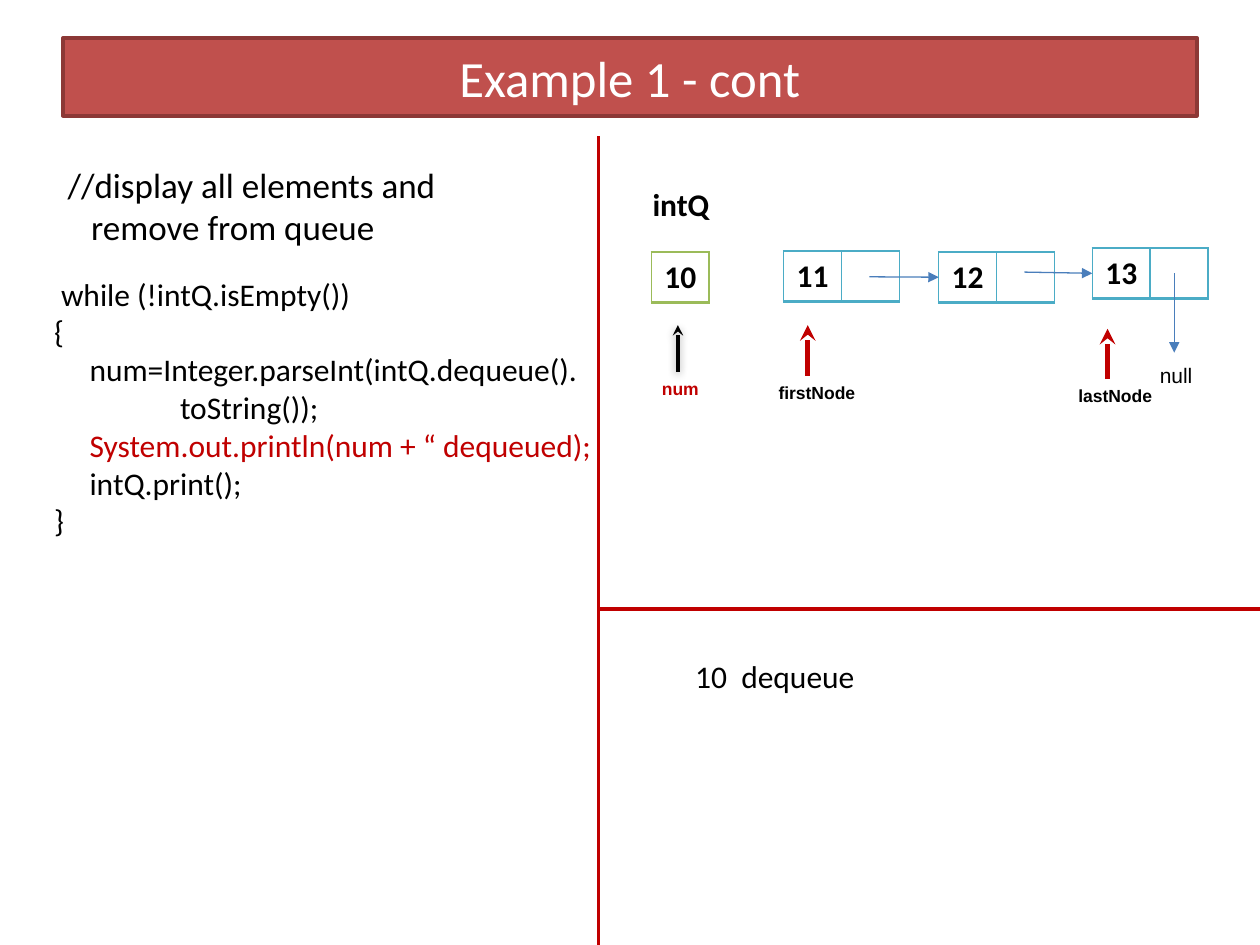
from lxml.etree import SubElement
from pptx import Presentation
from pptx.dml.color import RGBColor
from pptx.enum.shapes import MSO_CONNECTOR
from pptx.enum.text import MSO_ANCHOR, MSO_AUTO_SIZE, PP_ALIGN
from pptx.oxml import parse_xml
from pptx.oxml.ns import nsdecls, qn
from pptx.util import Pt

RED, BLACK, BLUE = "C00000", "000000", "4A7EBB"
TEAL, GREEN = "4BACC6", "9BBB59"


def tint(code):
    """Turn a hex string into a colour."""
    return RGBColor.from_string(code)


def style(para, size, color=BLACK, font="Calibri", bold=False):
    """Format every run of a paragraph."""
    for run in para.runs:
        run.font.size = Pt(size)
        run.font.name = font
        run.font.bold = bold
        run.font.color.rgb = tint(color)


def indent(para, left, first=0):
    """Set the left margin and first-line indent of a paragraph."""
    props = para._p.get_or_add_pPr()
    props.set("marL", str(Pt(left)))
    props.set("indent", str(Pt(first)))


def label(shapes, text, box, size, align=PP_ALIGN.LEFT, **look):
    """Add a text box, one paragraph for each line, and return its frame."""
    frame = shapes.add_textbox(*map(Pt, box)).text_frame
    frame.word_wrap = True
    frame.text = text
    for para in frame.paragraphs:
        para.alignment = align
        style(para, size, **look)
    return frame


def rule(shapes, start, end, color, width, head=None, shadow=False):
    """Draw a straight line, with an arrowhead and a soft shadow on request."""
    line = shapes.add_connector(MSO_CONNECTOR.STRAIGHT, *map(Pt, start + end))
    line.line.color.rgb = tint(color)
    line.line.width = Pt(width)
    if head:
        SubElement(line.line._get_or_add_ln(), qn("a:tailEnd"), type=head)
    props = line._element.spPr
    effects = SubElement(props, qn("a:effectLst"))
    if shadow:
        outer = SubElement(effects, qn("a:outerShdw"), blurRad=str(Pt(5)),
                           dist=str(Pt(1.6)), dir="5400000", rotWithShape="0")
        shade = SubElement(outer, qn("a:srgbClr"), val=BLACK)
        SubElement(shade, qn("a:alpha"), val="38000")


def edge(cell, color):
    """Clear a cell's fill and draw its four borders."""
    cell.fill.background()
    props = cell._tc.get_or_add_tcPr()
    for spot, (side, width) in enumerate(zip("LRTB", (1, 1, 1, 2))):
        props.insert(spot, parse_xml(
            f'<a:ln{side} {nsdecls("a")} w="{Pt(width)}"><a:solidFill>'
            f'<a:srgbClr val="{color}"/></a:solidFill></a:ln{side}>'))


def node(shapes, value, x, y, cols, color):
    """Draw a queue node as a one-row table with its value first."""
    wide, high = 33.1, 28.8
    grid = shapes.add_table(1, cols, Pt(x), Pt(y), Pt(wide * cols), Pt(high)).table
    grid.first_row = grid.horz_banding = False
    for cell in grid.iter_cells():
        edge(cell, color)
    frame = grid.cell(0, 0).text_frame
    frame.text = value
    frame.paragraphs[0].alignment = PP_ALIGN.CENTER
    style(frame.paragraphs[0], 18, bold=True)


def pointer(shapes, name, box, rise, ink, color, width, align, shadow=False):
    """Group a variable's name with the arrow rising from it."""
    group = shapes.add_group_shape().shapes
    x, y = box[0] + 23.8, box[1]
    label(group, name, box, 10, align, color=ink, font="Arial", bold=True)
    rule(group, (x, y), (x, y - rise), color, width, "stealth", shadow)


def heading(slide, box):
    """Fill the title band."""
    title = slide.shapes.title
    title.left, title.top, title.width, title.height = map(Pt, box)
    title.fill.solid()
    title.fill.fore_color.rgb = tint("C0504D")
    title.line.color.rgb = tint("8C3836")
    title.line.width = Pt(2)
    frame = title.text_frame
    frame.text = "Example 1 - cont"
    frame.auto_size = MSO_AUTO_SIZE.NONE
    frame.vertical_anchor = MSO_ANCHOR.MIDDLE
    frame.paragraphs[0].alignment = PP_ALIGN.CENTER
    style(frame.paragraphs[0], 29, "FFFFFF")


def listing(slide, box):
    """Place the comment and the code of the loop."""
    x, y = box[:2]
    note = label(slide.shapes, "//display all elements and remove from queue",
                 (x + 18, y + 12, 252, 36), 20)
    indent(note.paragraphs[0], 27, -13.5)
    lines = [("while (!intQ.isEmpty())", 4, BLACK),
             ("{", 0, BLACK),
             ("num=Integer.parseInt(intQ.dequeue().", 20.3, BLACK),
             ("toString());", 72, BLACK),
             ("System.out.println(num + “ dequeued);", 20.3, RED),
             ("intQ.print();", 20.3, BLACK),
             ("}", 0, BLACK)]
    code = label(slide.shapes, "\n".join(line[0] for line in lines),
                 (x + 23.8, y + 75.4, 327, 181.4), 18)
    for para, (_, left, color) in zip(code.paragraphs, lines):
        indent(para, left)
        style(para, 18, color)


def queue(slide, box):
    """Draw the linked nodes of the queue and their pointers."""
    x, y = box[:2]
    shapes = slide.shapes
    label(shapes, "intQ", (x + 23.8, y + 24.2, 50, 28.8), 18, bold=True)
    node(shapes, "10", x + 30.2, y + 66, 1, GREEN)
    for value, dx, dy in (("11", 105.8, 65.3), ("12", 194.4, 66), ("13", 282.2, 63.8)):
        node(shapes, value, x + dx, y + dy, 2, TEAL)
    for x1, y1, x2, y2 in ((154.8, 80.2, 194.4, 80.4), (243.4, 77.5, 282.2, 78.2),
                           (329, 78.2, 329, 123.5)):
        rule(shapes, (x + x1, y + y1), (x + x2, y + y2), BLUE, 0.75, "triangle")
    label(shapes, "null", (x + 306, y + 125.8, 48.2, 21.6), 12,
          PP_ALIGN.CENTER, font="Arial")
    for name, dx, dy in (("firstNode", 95.8, 136.6), ("lastNode", 267.1, 138.7)):
        pointer(shapes, name, (x + dx, y + dy, 68.4, 19.4), 28.8, BLACK, RED, 3,
                PP_ALIGN.LEFT)
    pointer(shapes, "num", (x + 21.6, y + 134.4, 50.4, 19.4), 26.6, RED, BLACK, 2,
            PP_ALIGN.CENTER, shadow=True)


def output(slide, box):
    """Show what the program prints."""
    x, y = box[:2]
    label(slide.shapes, "10  dequeue", (x + 48.2, y + 24.2, 108, 28.8), 18)


def main():
    """Build the slide and save it."""
    deck = Presentation()
    deck.slide_width, deck.slide_height = Pt(720), Pt(540)
    slide = deck.slides.add_slide(deck.slide_layouts[5])
    split, top, mid = 342, 78, 348
    heading(slide, (36, 21.6, 648, 44.6))
    rule(slide.shapes, (split, top), (split, 540), RED, 2.25)
    rule(slide.shapes, (split, mid), (720, mid), RED, 2.25)
    listing(slide, (0, top, split, 540 - top))
    queue(slide, (split, top, 720 - split, mid - top))
    output(slide, (split, mid, 720 - split, 540 - mid))
    deck.save("out.pptx")


if __name__ == "__main__":
    main()
